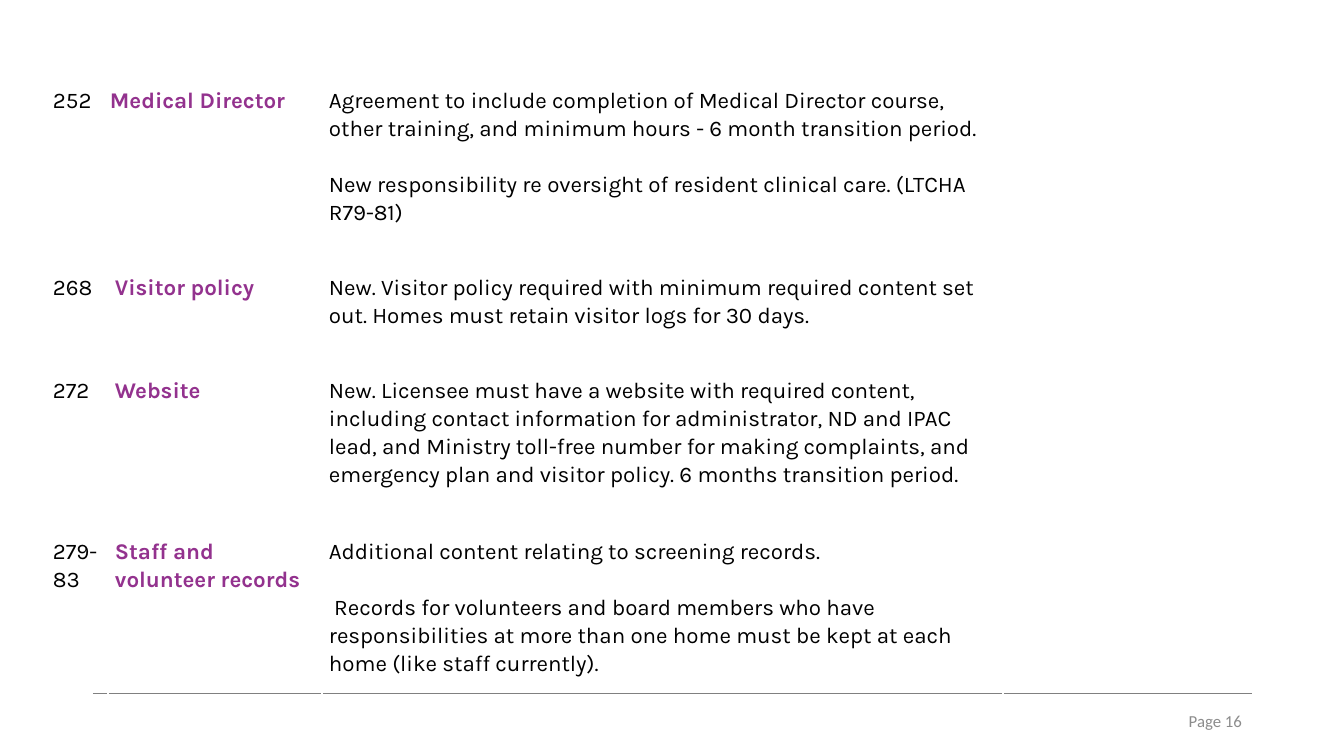
from pptx import Presentation
from pptx.dml.color import RGBColor
from pptx.enum.shapes import MSO_CONNECTOR
from pptx.enum.text import MSO_ANCHOR, PP_ALIGN
from pptx.util import Pt
from lxml import etree

PX = 914400 / 100.8
STRAIGHT = MSO_CONNECTOR.STRAIGHT
MIDDLE = MSO_ANCHOR.MIDDLE
RIGHT = PP_ALIGN.RIGHT
A = "http://schemas.openxmlformats.org/drawingml/2006/main"


def px(*lengths):
    return [round(n * PX) for n in lengths]


def write(p, text, color, **font):
    r = p.add_run()
    r.text = text
    r.font.color.rgb = RGBColor.from_string(color)
    for name, value in font.items():
        setattr(r.font, name, value)


prs = Presentation()
prs.slide_width, prs.slide_height = px(1344, 756)
s = prs.slides.add_slide(prs.slide_layouts[6])

rule = s.shapes.add_connector(STRAIGHT, *px(93, 693, 1252, 693))
rule.line.color.rgb = RGBColor.from_string("808080")
rule.line.width = Pt(0.5)
etree.SubElement(rule._element.spPr, f"{{{A}}}effectLst")

tf = s.shapes.add_textbox(*px(950, 701, 302, 40)).text_frame
tf.word_wrap = True
tf.vertical_anchor = MIDDLE
tf.paragraphs[0].alignment = RIGHT
write(tf.paragraphs[0], "Page 16", "8C8C8C", name="Calibri", size=Pt(12))

sections = [
    (86, 171, 57, "252", "Medical Director", [
        "Agreement to include completion of Medical Director course, other training, "
        "and minimum hours - 6 month transition period.",
        "New responsibility re oversight of resident clinical care. (LTCHA R79-81)"]),
    (273, 85, 62, "268", "Visitor policy", [
        "New. Visitor policy required with minimum required content set out. "
        "Homes must retain visitor logs for 30 days."]),
    (376, 142, 62, "272", "Website", [
        "New. Licensee must have a website with required content, including contact "
        "information for administrator, ND and IPAC lead, and Ministry toll-free number "
        "for making complaints, and emergency plan and visitor policy. "
        "6 months transition period."]),
    (537, 171, 62, "279-83", "Staff and volunteer records", [
        "Additional content relating to screening records.",
        " Records for volunteers and board members who have responsibilities at more "
        "than one home must be kept at each home (like staff currently)."]),
]

for top, height, number_width, number, topic, details in sections:
    table = s.shapes.add_table(1, 3, *px(46, top, 957, height)).table
    table.first_row = table.horz_banding = False
    widths = px(number_width, 276 - number_width, 681)
    columns = [([number], "000000", False), ([topic], "93328E", True),
               (details, "000000", False)]
    for i, (texts, color, bold) in enumerate(columns):
        table.columns[i].width = widths[i]
        cell = table.cell(0, i)
        cell.fill.background()
        cell.margin_left, cell.margin_right = px(7, 7)
        cell.margin_top = cell.margin_bottom = 0
        tf = cell.text_frame
        for j, text in enumerate(texts):
            p = tf.add_paragraph() if j else tf.paragraphs[0]
            p.line_spacing = 1.07
            if j:
                p.space_before = Pt(20)
            write(p, text, color, name="Karla", size=Pt(16), bold=bold)

prs.save("out.pptx")
